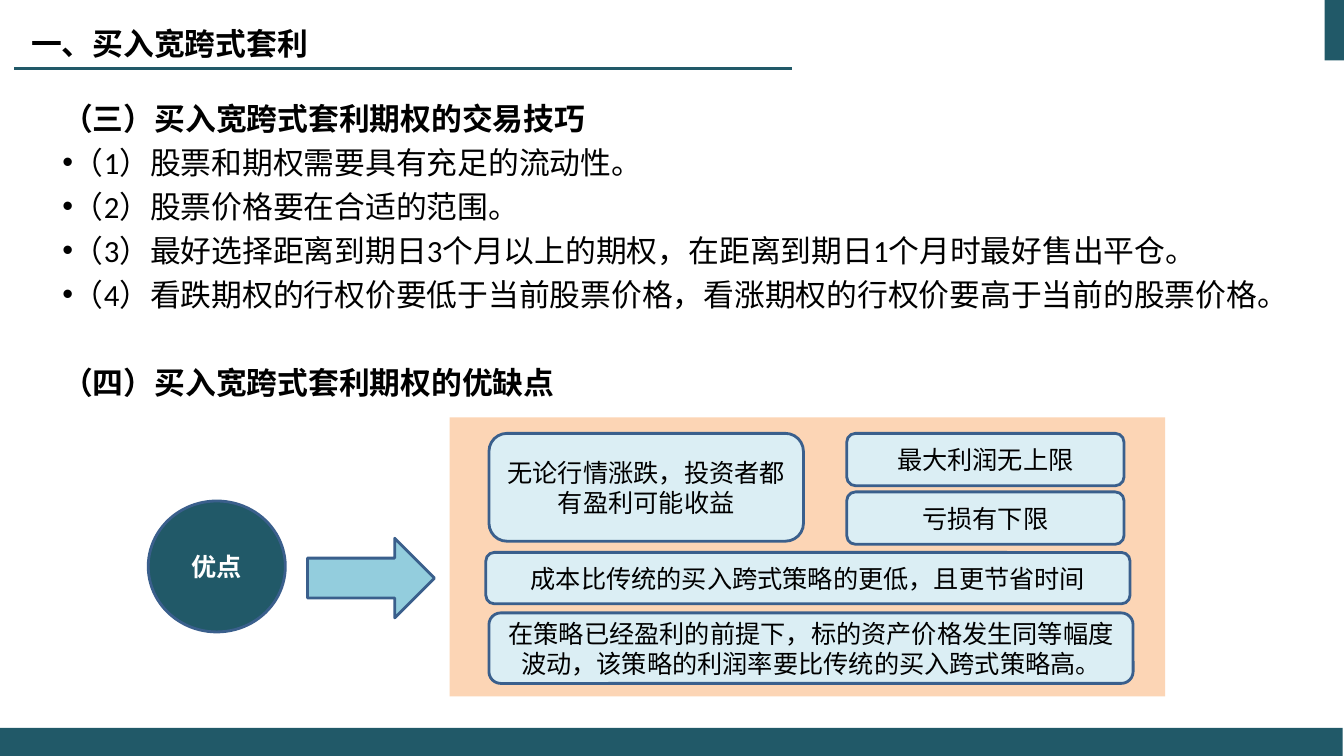
from dataclasses import dataclass

from lxml import etree
from pptx import Presentation
from pptx import util as u
from pptx.dml.color import RGBColor
from pptx.enum import shapes, text
from pptx.oxml.ns import qn


@dataclass(frozen=True)
class Theme:
    teal: str = "215968"
    outline: str = "3A5F8C"
    panel: str = "FCD5B5"
    card: str = "DBEEF4"
    arrow: str = "93CDDD"
    ink: str = "000000"
    white: str = "FFFFFF"
    body_pt: float = 22
    label_pt: float = 18
    leading_pt: float = 31.4
    outline_pt: float = 2
    rule_pt: float = 1.5
    body_font: str = "Calibri"
    title_font: str = "Noto Sans CJK SC"
    serif_font: str = "Times New Roman"


THEME = Theme()
KIND = shapes.MSO_SHAPE
WIDTH, HEIGHT = u.Inches(13.33), u.Inches(7.5)

TECHNIQUES = [
    "（1）股票和期权需要具有充足的流动性。",
    "（2）股票价格要在合适的范围。",
    "（3）最好选择距离到期日3个月以上的期权，在距离到期日1个月时最好售出平仓。",
    "（4）看跌期权的行权价要低于当前股票价格，看涨期权的行权价要高于当前的股票价格。",
]

# Each advantage: left, top, width, height, wording, font
ADVANTAGES = [
    (36.38, 57.33, 23.4, 14.27, "无论行情涨跌，投资者都有盈利可能收益", THEME.body_font),
    (63, 57.33, 20.63, 6.93, "最大利润无上限", THEME.serif_font),
    (63, 65.07, 20.63, 6.93, "亏损有下限", THEME.serif_font),
    (36.15, 73.07, 47.93, 6.8, "成本比传统的买入跨式策略的更低，且更节省时间", THEME.body_font),
    (36.38, 81.07, 47.93, 9.33,
     "在策略已经盈利的前提下，标的资产价格发生同等幅度波动，该策略的利润率要比传统的买入跨式策略高。",
     THEME.body_font),
]


def area(left, top, width, height):
    """Turn percentages of the slide's width and height into lengths."""
    return [u.Emu(round(share * side / 100)) for share, side in
            zip((left, top, width, height), (WIDTH, HEIGHT, WIDTH, HEIGHT))]


def add_run(paragraph, wording, size, color=THEME.ink, bold=False, font=THEME.body_font):
    run = paragraph.add_run()
    run.text = wording
    run.font.size = u.Pt(size)
    run.font.bold = bold
    run.font.color.rgb = RGBColor.from_string(color)
    run.font.name = font
    east_asian = etree.SubElement(run.font._element, qn("a:ea"))
    east_asian.set("typeface", THEME.title_font)


def add_block(slide, kind, place, fill, outlined=True):
    block = slide.shapes.add_shape(kind, *area(*place))
    block.shadow.inherit = False
    block.fill.solid()
    block.fill.fore_color.rgb = RGBColor.from_string(fill)
    if outlined:
        block.line.color.rgb = RGBColor.from_string(THEME.outline)
        block.line.width = u.Pt(THEME.outline_pt)
    else:
        block.line.fill.background()
    return block


def add_label(block, wording, **style):
    frame = block.text_frame
    frame.word_wrap = True
    frame.vertical_anchor = text.MSO_ANCHOR.MIDDLE
    frame.paragraphs[0].alignment = text.PP_ALIGN.CENTER
    add_run(frame.paragraphs[0], wording, THEME.label_pt, **style)


def add_text_frame(slide, place, anchor):
    frame = slide.shapes.add_textbox(*area(*place)).text_frame
    frame.word_wrap = True
    frame.vertical_anchor = anchor
    return frame


def add_rule(slide, start, end, top):
    left, y, length, _ = area(start, top, end - start, 0)
    rule = slide.shapes.add_connector(
        shapes.MSO_CONNECTOR.STRAIGHT, left, y, left + length, y)
    rule.line.color.rgb = RGBColor.from_string(THEME.teal)
    rule.line.width = u.Pt(THEME.rule_pt)
    etree.SubElement(rule._element.spPr, qn("a:effectLst"))


def set_bullet(paragraph):
    properties = paragraph._p.get_or_add_pPr()
    etree.SubElement(properties, qn("a:buFont")).set("typeface", "Arial")
    etree.SubElement(properties, qn("a:buChar")).set("char", "•")


def add_body(slide):
    frame = add_text_frame(slide, (3.9, 12.27, 96.1, 46.5), text.MSO_ANCHOR.TOP)
    frame.margin_top = frame.margin_bottom = 0
    heading = frame.paragraphs[0]
    heading.line_spacing = u.Pt(THEME.leading_pt)
    add_run(heading, "（三）买入宽跨式套利期权的交易技巧", THEME.body_pt, bold=True)
    for technique in TECHNIQUES:
        item = frame.add_paragraph()
        set_bullet(item)
        item.line_spacing = u.Pt(THEME.leading_pt)
        add_run(item, technique, THEME.body_pt)
    heading = frame.add_paragraph()
    heading.line_spacing = heading.space_before = u.Pt(THEME.leading_pt)
    add_run(heading, "（四）买入宽跨式套利期权的优缺点", THEME.body_pt, bold=True)


def main():
    deck = Presentation()
    deck.slide_width, deck.slide_height = WIDTH, HEIGHT
    slide = deck.slides.add_slide(deck.slide_layouts[6])

    add_block(slide, KIND.RECTANGLE, (98.55, 0, 1.45, 8), THEME.teal, outlined=False)
    add_rule(slide, 1.05, 58.95, 9.07)
    add_block(slide, KIND.RECTANGLE, (0, 96.27, 99.9, 3.73), THEME.teal, outlined=False)

    add_body(slide)
    title = add_text_frame(slide, (1.58, 0, 81.6, 11.33), text.MSO_ANCHOR.MIDDLE)
    add_run(title.paragraphs[0], "一、买入宽跨式套利", THEME.body_pt,
            bold=True, font=THEME.title_font)

    add_block(slide, KIND.RECTANGLE, (33.45, 55.2, 53.25, 36.93), THEME.panel, outlined=False)
    topic = add_block(slide, KIND.OVAL, (11.03, 66.27, 10.2, 17.33), THEME.teal)
    add_label(topic, "优点", color=THEME.white, bold=True)
    add_block(slide, KIND.RIGHT_ARROW, (22.88, 71.2, 9.45, 10.53), THEME.arrow)
    for *place, wording, font in ADVANTAGES:
        card = add_block(slide, KIND.ROUNDED_RECTANGLE, place, THEME.card)
        add_label(card, wording, font=font)

    deck.save("out.pptx")


if __name__ == "__main__":
    main()
